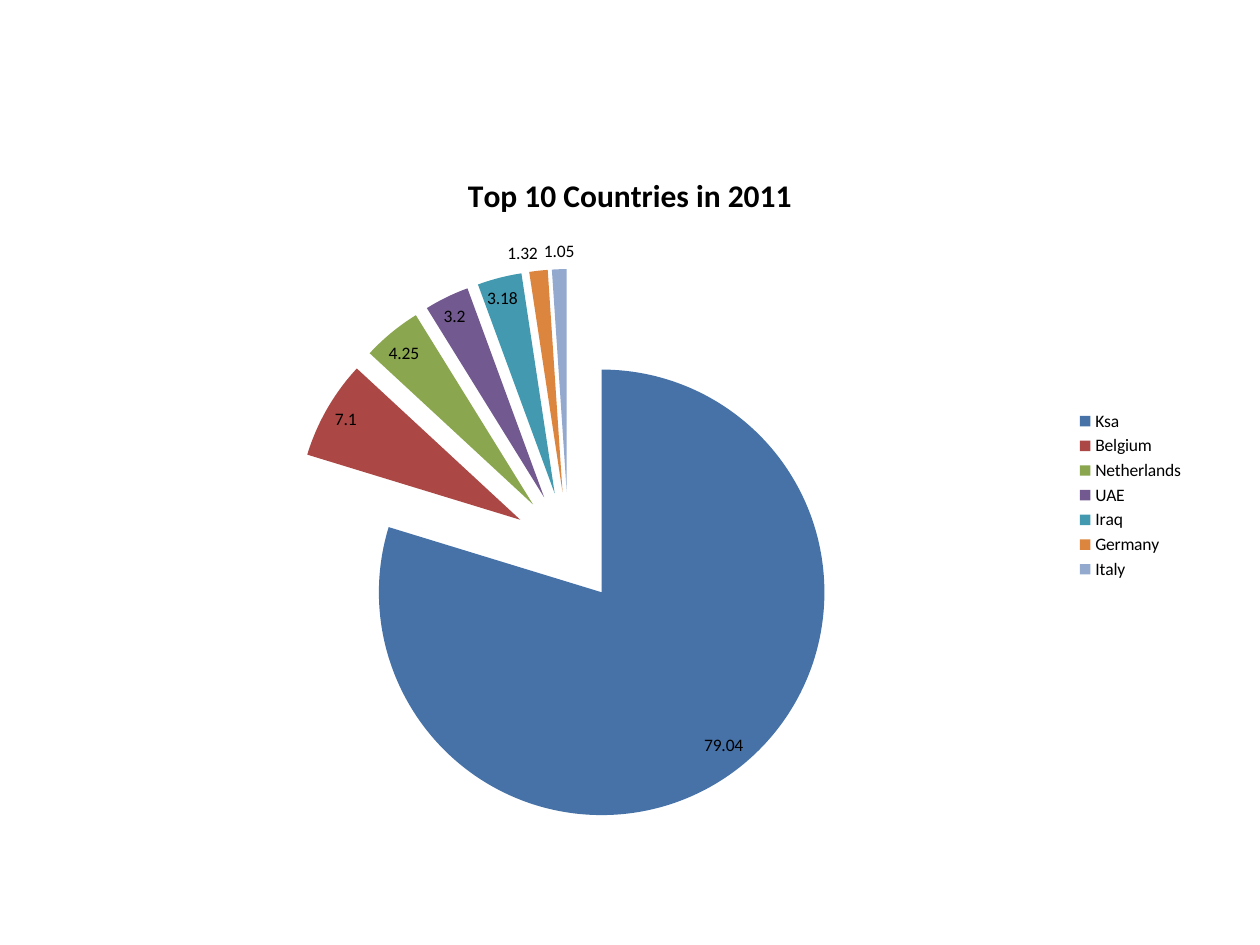
from pptx import Presentation
from pptx.chart import data
from pptx.dml import color
from pptx.enum import chart as chart_enum
from pptx.util import Pt

FONT = "Calibri"
COUNTRIES = [
    ("Ksa", 79.04, "4672A8"),
    ("Belgium", 7.1, "AB4744"),
    ("Netherlands", 4.25, "8AA64F"),
    ("UAE", 3.2, "725990"),
    ("Iraq", 3.18, "4299B0"),
    ("Germany", 1.32, "DC853E"),
    ("Italy", 1.05, "93A9CE"),
]
EXPLOSION = 25


def rgb(value):
    return color.RGBColor.from_string(value)


def style_font(font, size, bold=False):
    font.name = FONT
    font.size = Pt(size)
    font.bold = bold
    font.color.rgb = rgb("000000")


def add_country_pie(slide, left, top, width, height):
    names, values, colors = zip(*COUNTRIES)
    chart_data = data.CategoryChartData()
    chart_data.categories = names
    chart_data.add_series("Series 1", values)
    frame = slide.shapes.add_chart(
        chart_enum.XL_CHART_TYPE.PIE_EXPLODED,
        Pt(left), Pt(top), Pt(width), Pt(height), chart_data)
    chart = frame.chart
    style_font(chart.font, 10)

    # Title
    chart.has_title = True
    run = chart.chart_title.text_frame.paragraphs[0].add_run()
    run.text = "Top 10 Countries in 2011"
    style_font(run.font, 18, bold=True)
    chart.chart_title.include_in_layout = False

    # Legend
    chart.has_legend = True
    chart.legend.position = chart_enum.XL_LEGEND_POSITION.RIGHT
    chart.legend.include_in_layout = False

    # Slices, all pulled out by the same share of the radius
    plot = chart.plots[0]
    plot.vary_by_categories = True
    series = plot.series[0]
    for index, value in enumerate(colors):
        fill = series.points[index].format.fill
        fill.solid()
        fill.fore_color.rgb = rgb(value)
    for explosion in series._element.xpath(".//c:explosion"):
        explosion.set("val", str(EXPLOSION))

    # Value labels
    plot.has_data_labels = True
    labels = plot.data_labels
    labels.show_value = True
    labels.show_percentage = False
    labels.position = chart_enum.XL_LABEL_POSITION.BEST_FIT
    style_font(labels.font, 10)


def main():
    presentation = Presentation()
    presentation.slide_width = Pt(720)
    presentation.slide_height = Pt(540)
    slide = presentation.slides.add_slide(presentation.slide_layouts[6])
    add_country_pie(slide, 36, 84, 648, 398)
    presentation.save("out.pptx")


if __name__ == "__main__":
    main()
